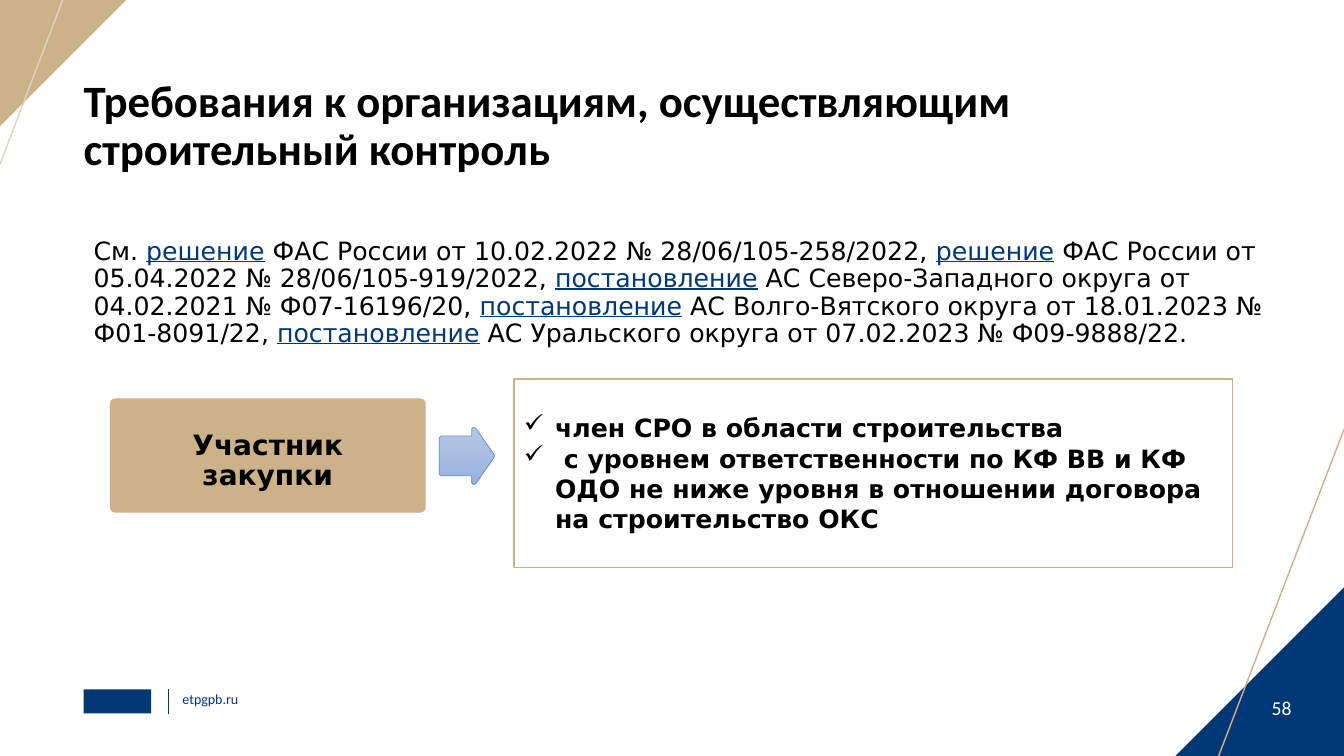
from dataclasses import dataclass

from lxml import etree
from pptx import Presentation
from pptx import util as u
from pptx.dml.color import RGBColor
from pptx.enum import shapes, text
from pptx.oxml import ns


@dataclass(frozen=True)
class Theme:
    """Colours, fonts and type sizes of the deck."""
    navy: str = "003876"
    link: str = "003775"
    sand: str = "CCB289"
    pale_sand: str = "E3D2C0"
    white: str = "FFFFFF"
    black: str = "000000"
    arrow_top: str = "B6C7E5"
    arrow_bottom: str = "9AB2DD"
    arrow_edge: str = "6991CC"
    heading_font: str = "Calibri"
    body_font: str = "DejaVu Sans"
    title_size: int = 32
    label_size: int = 20
    body_size: int = 18
    number_size: int = 14
    footer_size: int = 10


class SlideBuilder:
    """Draws styled elements on the current page."""

    def __init__(self, page, theme):
        self.page = page
        self.theme = theme

    def paint(self, shape, fill, line=None, width=1):
        """Set the fill and outline of a shape."""
        shape.shadow.inherit = False
        shape.fill.solid()
        shape.fill.fore_color.rgb = RGBColor.from_string(fill)
        self.outline(shape, line, width)

    def outline(self, shape, line, width):
        """Set or remove the outline of a shape."""
        if line is None:
            shape.line.fill.background()
        else:
            shape.line.color.rgb = RGBColor.from_string(line)
            shape.line.width = u.Pt(width)

    def shape(self, kind, place, fill, line=None, adjust=None, turn=0):
        """Add a preset shape."""
        shape = self.page.shapes.add_shape(kind, *map(u.Cm, place))
        self.paint(shape, fill, line)
        if adjust is not None:
            shape.adjustments[0] = adjust
        shape.rotation = turn
        return shape

    def line(self, start, end, color, width):
        """Add a straight line."""
        line = self.page.shapes.add_connector(
            shapes.MSO_CONNECTOR.STRAIGHT, *map(u.Cm, start + end))
        self.outline(line, color, width)
        etree.SubElement(line._element.spPr, ns.qn("a:effectLst"))

    def arrow(self, middle, upper_edge):
        """Add a symmetric arrow given its upper edge from tail to tip."""
        lower_edge = [(x, -y) for x, y in reversed(upper_edge[:-1])]
        points = [(u.Cm(x), u.Cm(middle + y)) for x, y in upper_edge + lower_edge]
        outline = self.page.shapes.build_freeform(*points[0])
        outline.add_line_segments(points[1:])
        arrow = outline.convert_to_shape()
        arrow.shadow.inherit = False
        arrow.fill.gradient()
        arrow.fill.gradient_angle = 270
        colors = (self.theme.arrow_top, self.theme.arrow_bottom)
        for stop, color in zip(arrow.fill.gradient_stops, colors):
            stop.color.rgb = RGBColor.from_string(color)
        self.outline(arrow, self.theme.arrow_edge, 0.5)

    def text_box(self, place, margins=(0, 0, 0, 0)):
        """Add an empty text box."""
        box = self.page.shapes.add_textbox(*map(u.Cm, place))
        self.frame(box, margins)
        return box

    def frame(self, box, margins, anchor=text.MSO_ANCHOR.TOP):
        """Set wrapping, margins and anchor of a box."""
        frame = box.text_frame
        frame.word_wrap = True
        frame.vertical_anchor = anchor
        (frame.margin_left, frame.margin_top,
         frame.margin_right, frame.margin_bottom) = map(u.Cm, margins)

    def span(self, para, words, size, font=None, color=None, bold=False, underline=False):
        """Add one run to a paragraph."""
        span = para.add_run()
        span.text = words
        span.font.name = font or self.theme.body_font
        span.font.size = u.Pt(size)
        span.font.bold = bold
        span.font.underline = underline
        span.font.color.rgb = RGBColor.from_string(color or self.theme.black)

    def checklist(self, box, items):
        """Fill a box with check-marked bold items."""
        frame = box.text_frame
        for index, item in enumerate(items):
            para = frame.add_paragraph() if index else frame.paragraphs[0]
            para.alignment = text.PP_ALIGN.LEFT
            properties = para._p.get_or_add_pPr()
            properties.set("marL", str(u.Cm(0.79)))
            properties.set("indent", str(-u.Cm(0.79)))
            etree.SubElement(properties, ns.qn("a:buChar")).set("char", "✓")
            self.span(para, item, self.theme.body_size, bold=True)


def decorate(builder):
    """Draw the corners and the footer."""
    theme = builder.theme
    triangle = shapes.MSO_SHAPE.ISOSCELES_TRIANGLE
    builder.shape(triangle, (29.62, 14.8, 4.25, 4.25), theme.navy, adjust=1)
    builder.line((33.87, 10.82), (30.71, 19.05), theme.sand, 1)
    builder.shape(triangle, (0, 0, 3.18, 3.18), theme.sand, adjust=1, turn=180)
    builder.line((1.58, 0), (0, 4.14), theme.pale_sand, 1)

    number = builder.text_box((31.27, 17.22, 2.06, 0.91))
    number.text_frame.vertical_anchor = text.MSO_ANCHOR.BOTTOM
    para = number.text_frame.paragraphs[0]
    para.alignment = text.PP_ALIGN.CENTER
    builder.span(para, "58", theme.number_size, theme.heading_font, theme.white)

    builder.shape(shapes.MSO_SHAPE.RECTANGLE, (2.11, 17.37, 1.7, 0.61), theme.navy)
    builder.line((4.24, 17.37), (4.24, 17.98), theme.navy, 0.5)
    site = builder.text_box((4.6, 17.4, 2.79, 0.43))
    builder.span(site.text_frame.paragraphs[0], "etpgpb.ru",
                 theme.footer_size, theme.heading_font, theme.navy)


def main():
    """Build the slide and save it."""
    deck = Presentation()
    deck.slide_width, deck.slide_height = u.Cm(33.87), u.Cm(19.05)
    theme = Theme()
    builder = SlideBuilder(deck.slides.add_slide(deck.slide_layouts[6]), theme)
    decorate(builder)

    title = builder.text_box((2.11, 1.98, 29.62, 2.46))
    para = title.text_frame.paragraphs[0]
    para.line_spacing = 0.9
    builder.span(para, "Требования к организациям, осуществляющим строительный контроль",
                 theme.title_size, theme.heading_font, bold=True)

    rulings = builder.text_box((2.11, 5.89, 30.86, 10.24), (0.25, 0.13, 0.25, 0.13))
    para = rulings.text_frame.paragraphs[0]
    para.line_spacing = 0.9
    builder.span(para, "См. ", theme.body_size)
    for act, source in (
        ("решение", " ФАС России от 10.02.2022 № 28/06/105-258/2022, "),
        ("решение", " ФАС России от 05.04.2022 № 28/06/105-919/2022, "),
        ("постановление", " АС Северо-Западного округа от 04.02.2021 № Ф07-16196/20, "),
        ("постановление", " АС Волго-Вятского округа от 18.01.2023 № Ф01-8091/22, "),
        ("постановление", " АС Уральского округа от 07.02.2023 № Ф09-9888/22."),
    ):
        builder.span(para, act, theme.body_size, color=theme.link, underline=True)
        builder.span(para, source, theme.body_size)

    bidder = builder.shape(shapes.MSO_SHAPE.ROUNDED_RECTANGLE, (2.79, 10.06, 7.92, 2.84),
                           theme.sand, theme.sand, adjust=0.04)
    builder.frame(bidder, (0.35, 0.3, 0.35, 0), text.MSO_ANCHOR.MIDDLE)
    para = bidder.text_frame.paragraphs[0]
    para.alignment = text.PP_ALIGN.CENTER
    para.line_spacing = 0.9
    builder.span(para, "Участник закупки", theme.label_size, bold=True)

    builder.arrow(11.49, [(11.07, -0.46), (11.12, -0.5), (11.89, -0.5), (11.89, -0.68),
                          (11.93, -0.72), (11.99, -0.7), (12.45, -0.04), (12.47, 0)])

    demands = builder.shape(shapes.MSO_SHAPE.RECTANGLE, (12.95, 9.55, 18.11, 4.75),
                            theme.white, theme.sand)
    builder.frame(demands, (0.25, 0.13, 0.25, 0.13), text.MSO_ANCHOR.MIDDLE)
    builder.checklist(demands, (
        "член СРО в области строительства",
        " с уровнем ответственности по КФ ВВ и КФ ОДО не ниже уровня "
        "в отношении договора на строительство ОКС",
    ))
    deck.save("out.pptx")


if __name__ == "__main__":
    main()
